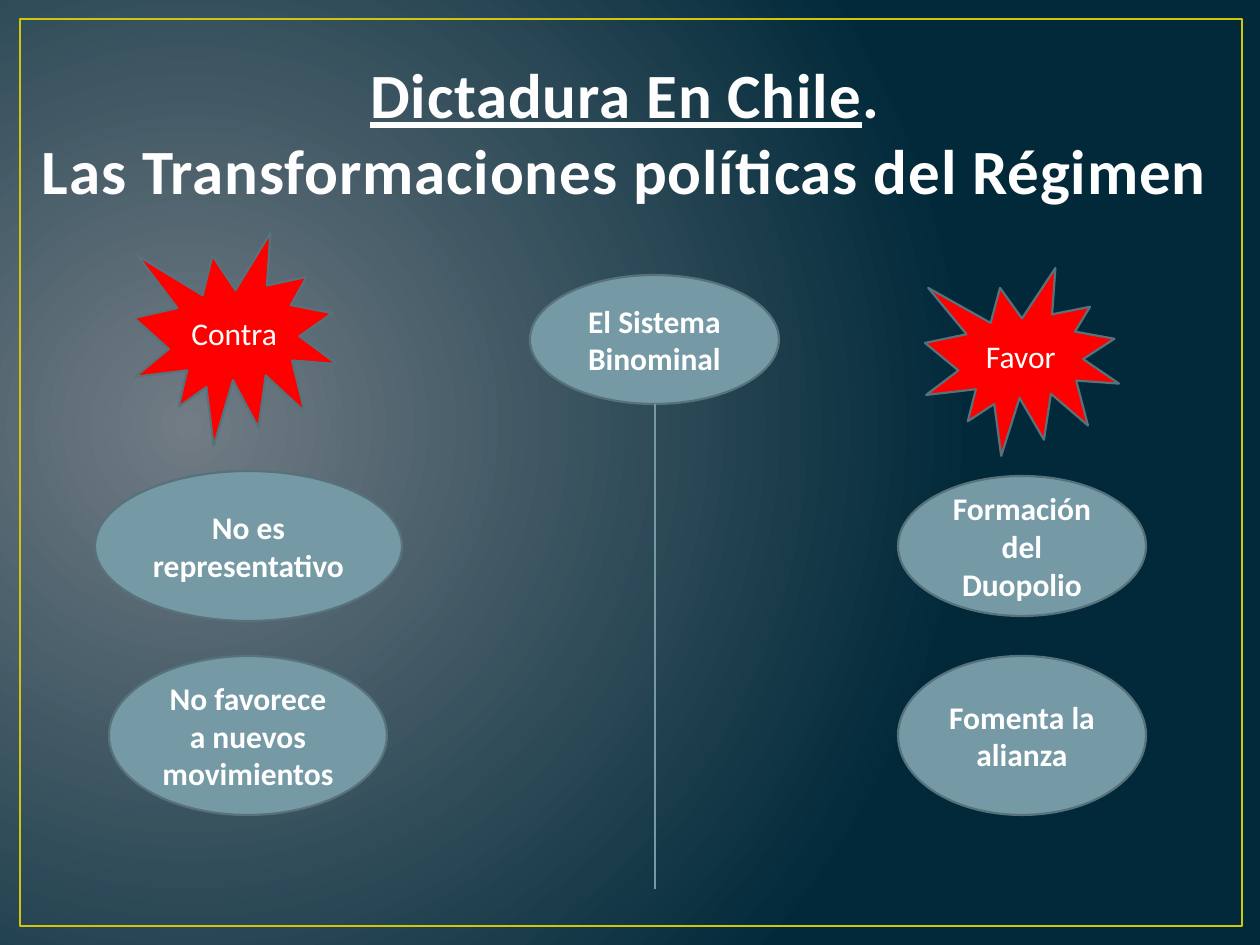
from lxml import etree
from pptx import Presentation
from pptx.dml.color import RGBColor
from pptx.enum.shapes import MSO_CONNECTOR, MSO_SHAPE
from pptx.enum.text import MSO_ANCHOR, PP_ALIGN
from pptx.oxml.ns import qn
from pptx.util import Emu, Pt

OVAL = MSO_SHAPE.OVAL
BURST = MSO_SHAPE.EXPLOSION1
RECTANGLE = MSO_SHAPE.RECTANGLE
STRAIGHT = MSO_CONNECTOR.STRAIGHT
CENTER = PP_ALIGN.CENTER
MIDDLE, BOTTOM = MSO_ANCHOR.MIDDLE, MSO_ANCHOR.BOTTOM

EMU_PER_PX = 914400 / 126


def px(length):
    return Emu(round(length * EMU_PER_PX))


def color(hex_code):
    return RGBColor.from_string(hex_code)


def add_run(paragraph, text, size=18, hex_code="FFFFFF", bold=False,
            underline=False, spacing=None):
    run = paragraph.add_run()
    run.text = text
    run.font.name = "Calibri"
    run.font.size = Pt(size)
    run.font.bold = bold
    run.font.underline = underline
    run.font.color.rgb = color(hex_code)
    if spacing is not None:
        run.font._element.set("spc", str(round(spacing * 100)))


class Deck:
    teal, outline, red, gold = "759AA5", "57727A", "FF0000", "CFC60D"
    glow, night = "717C84", "01293A"

    def __init__(self, width, height):
        self.presentation = Presentation()
        self.presentation.slide_width = px(width)
        self.presentation.slide_height = px(height)
        self.slide = self.presentation.slides.add_slide(
            self.presentation.slide_layouts[6])

    def radial_background(self, **focus):
        fill = self.slide.background.fill
        fill.gradient()
        for stop, hex_code, position in zip(
                fill.gradient_stops, (self.glow, self.night), (0, 1)):
            stop.color.rgb = color(hex_code)
            stop.position = position
        gradient = self.slide.element.find(".//" + qn("a:gradFill"))
        gradient.remove(gradient.find(qn("a:lin")))
        circle = etree.SubElement(gradient, qn("a:path"), {"path": "circle"})
        etree.SubElement(circle, qn("a:fillToRect"),
                         {side: str(pct * 1000) for side, pct in focus.items()})

    def frame(self, *box):
        border = self.slide.shapes.add_shape(RECTANGLE, *map(px, box))
        border.shadow.inherit = False
        border.fill.background()
        border.line.color.rgb = color(self.gold)
        border.line.width = Pt(1.5)

    def title(self, box, lines, right_margin):
        heading = self.slide.shapes.add_textbox(*map(px, box)).text_frame
        heading.word_wrap = True
        heading.vertical_anchor = BOTTOM
        heading.margin_left, heading.margin_right = 0, px(right_margin)
        for index, pieces in enumerate(lines):
            paragraph = heading.add_paragraph() if index else heading.paragraphs[0]
            paragraph.alignment = CENTER
            for text, underline in pieces:
                add_run(paragraph, text, size=36, hex_code="FEFEFE", bold=True,
                        underline=underline, spacing=0.5)

    def bubble(self, preset, box, text, fill, bold):
        bubble = self.slide.shapes.add_shape(preset, *map(px, box))
        bubble.shadow.inherit = False
        bubble.fill.solid()
        bubble.fill.fore_color.rgb = color(fill)
        bubble.line.color.rgb = color(self.outline)
        bubble.line.width = Pt(1.25)
        bubble.text_frame.word_wrap = True
        bubble.text_frame.vertical_anchor = MIDDLE
        paragraph = bubble.text_frame.paragraphs[0]
        paragraph.alignment = CENTER
        add_run(paragraph, text, bold=bold)

    def idea(self, box, text):
        self.bubble(OVAL, box, text, self.teal, bold=True)

    def verdict(self, box, text):
        self.bubble(BURST, box, text, self.red, bold=False)

    def divider(self, x, top, bottom):
        line = self.slide.shapes.add_connector(
            STRAIGHT, px(x), px(top), px(x), px(bottom))
        line.line.color.rgb = color(self.teal)
        line.line.width = Pt(0.75)
        etree.SubElement(line._element.spPr, qn("a:effectLst"))


def main():
    deck = Deck(1260, 945)

    # Background and heading
    deck.radial_background(l=15, t=50, r=85, b=60)
    deck.frame(20, 19, 1222, 907)
    deck.title((25, 55, 1221, 158), [
        [("Dictadura En Chile", True), (".", False)],
        [("Las Transformaciones políticas del Régimen", False)],
    ], right_margin=21)

    # Topic, with the line that parts the two sides
    deck.idea((530, 275, 249, 129), "El Sistema Binominal")
    deck.divider(655, 404, 889)

    # Arguments in favour
    deck.idea((898, 476, 248, 140), "Formación del Duopolio")
    deck.idea((898, 656, 248, 159), "Fomenta la alianza")
    deck.verdict((925, 268, 194, 188), "Favor")

    # Arguments against
    deck.idea((95, 471, 307, 150), "No es representativo")
    deck.idea((109, 656, 278, 159), "No favorece a nuevos movimientos")
    deck.verdict((134, 233, 203, 213), "Contra")

    deck.presentation.save("out.pptx")


if __name__ == "__main__":
    main()
